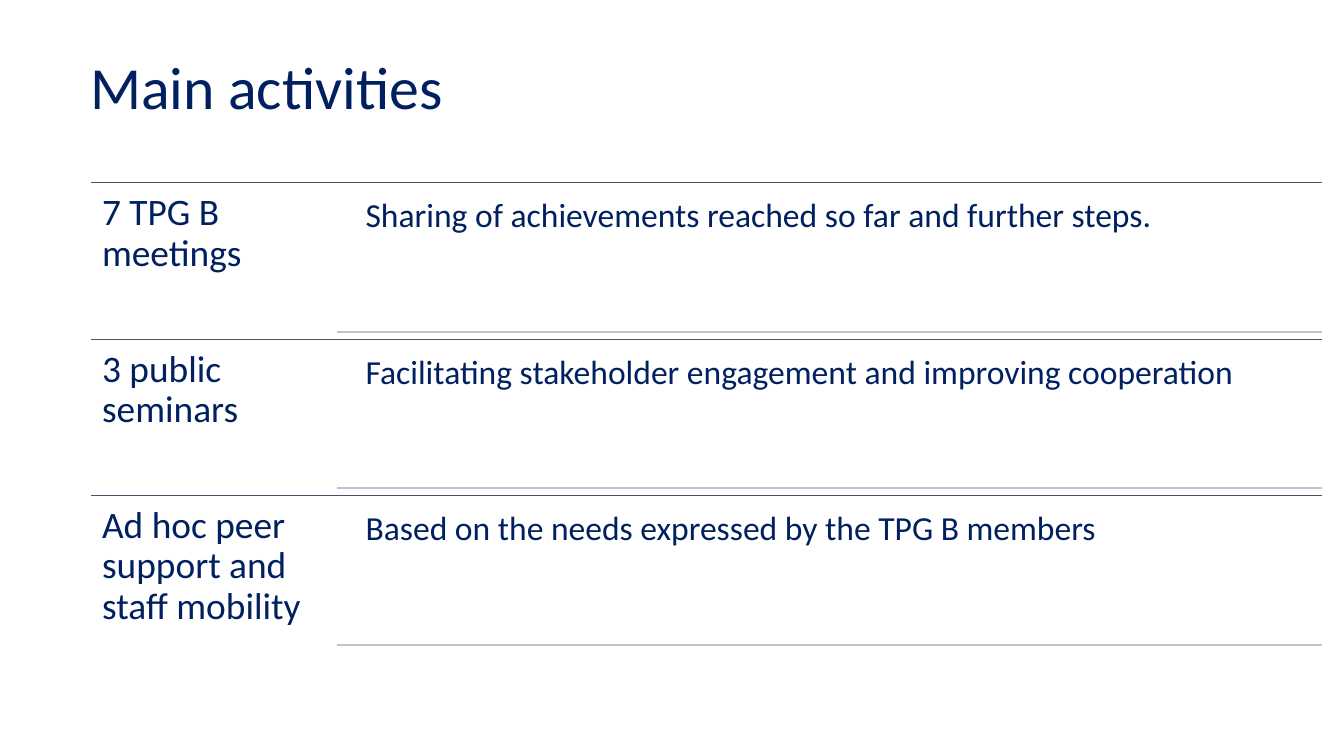
from pptx import Presentation
from pptx.dml.color import RGBColor
from pptx.enum.shapes import MSO_CONNECTOR
from pptx.enum.text import MSO_ANCHOR, MSO_AUTO_SIZE, PP_ALIGN
from pptx.oxml.ns import qn
from pptx.util import Inches, Pt
from lxml import etree

TITLE = "Main activities"
ACTIVITIES = [
    ("7 TPG B meetings",
     "Sharing of achievements reached so far and further steps."),
    ("3 public seminars",
     "Facilitating stakeholder engagement and improving cooperation"),
    ("Ad hoc peer support and staff mobility",
     "Based on the needs expressed by the TPG B members"),
]

NAVY = RGBColor(0x00, 0x20, 0x60)
SLATE = RGBColor(0x44, 0x54, 0x6A)
SILVER = RGBColor(0xC1, 0xC3, 0xC7)
FONT = "Calibri"
STRAIGHT = MSO_CONNECTOR.STRAIGHT
TOP, LEFT, NO_FIT = MSO_ANCHOR.TOP, PP_ALIGN.LEFT, MSO_AUTO_SIZE.NONE
TITLE_ONLY = 5

SLIDE_WIDTH = Inches(10)
SLIDE_HEIGHT = SLIDE_WIDTH * 9 // 16
LIST_LEFT, LIST_RIGHT = 0.68, 9.84
LIST_TOP, LIST_HEIGHT = 1.36, 3.49
ROW_HEIGHT = LIST_HEIGHT / len(ACTIVITIES)
NAME_WIDTH = 1.83
RULE_LEFT = LIST_LEFT + NAME_WIDTH
DETAIL_LEFT, DETAIL_OFFSET, DETAIL_HEIGHT = 2.65, 0.05, 1.06


def write(shape, text, size, inset=None, line_spacing=None):
    frame = shape.text_frame
    frame.text = text
    frame.word_wrap = True
    frame.auto_size = NO_FIT
    frame.vertical_anchor = TOP
    if inset is not None:
        for side in ("left", "top", "right", "bottom"):
            setattr(frame, f"margin_{side}", Inches(inset))
    paragraph = frame.paragraphs[0]
    paragraph.alignment = LEFT
    paragraph.line_spacing = line_spacing
    font = paragraph.runs[0].font
    for key, value in {"name": FONT, "size": Pt(size)}.items():
        setattr(font, key, value)
    font.color.rgb = NAVY


def add_text(slide, box, *text_format):
    write(slide.shapes.add_textbox(*map(Inches, box)), *text_format)


def add_rule(slide, left, y, color, width):
    rule = slide.shapes.add_connector(
        STRAIGHT, Inches(left), Inches(y), Inches(LIST_RIGHT), Inches(y))
    rule.line.color.rgb = color
    rule.line.width = Pt(width)
    etree.SubElement(rule._element.spPr, qn("a:effectLst"))


prs = Presentation()
prs.slide_width, prs.slide_height = SLIDE_WIDTH, SLIDE_HEIGHT
slide = prs.slides.add_slide(prs.slide_layouts[TITLE_ONLY])

title = slide.shapes.title
title.left, title.top = Inches(0.57), Inches(0.32)
title.width, title.height = Inches(7.37), Inches(0.92)
write(title, TITLE, 32)

for row, (activity, detail) in enumerate(ACTIVITIES):
    top = LIST_TOP + row * ROW_HEIGHT
    detail_top = top + DETAIL_OFFSET
    add_rule(slide, LIST_LEFT, top, SLATE, 0.5)
    add_text(slide, (LIST_LEFT, top, NAME_WIDTH, ROW_HEIGHT),
             activity, 20, 0.08, 0.9)
    add_text(slide, (DETAIL_LEFT, detail_top, LIST_RIGHT - DETAIL_LEFT, DETAIL_HEIGHT),
             detail, 18, 0.07, 0.9)
    add_rule(slide, RULE_LEFT, detail_top + DETAIL_HEIGHT, SILVER, 1)

prs.save("out.pptx")
